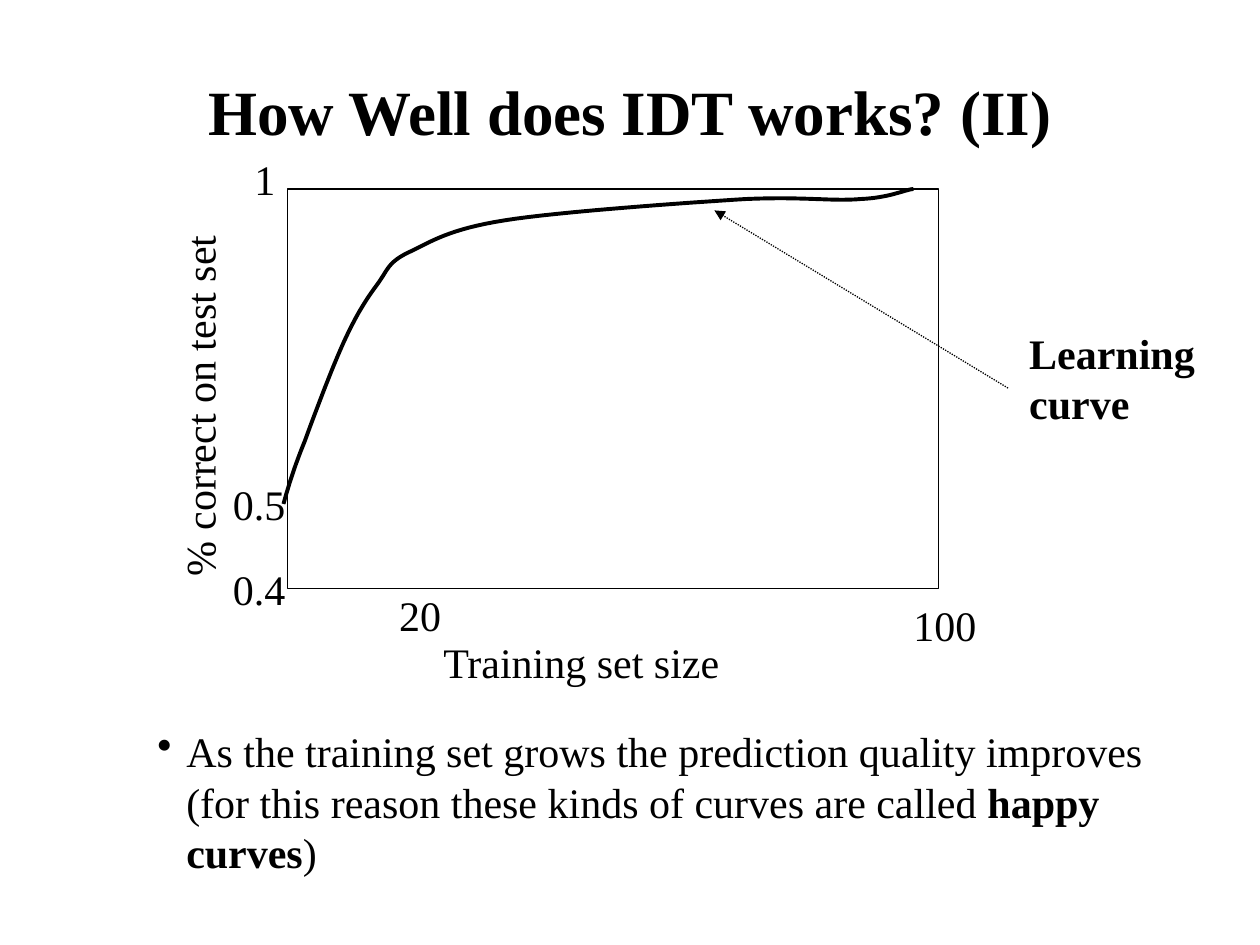
from dataclasses import dataclass
from lxml.etree import SubElement
from pptx import Presentation
from pptx.dml.color import RGBColor
from pptx.enum.dml import MSO_LINE
from pptx.enum.shapes import MSO_CONNECTOR, MSO_SHAPE
from pptx.enum.text import MSO_ANCHOR, MSO_AUTO_SIZE, PP_ALIGN
from pptx.oxml.ns import qn
from pptx.util import Pt

PX = 9144  # EMU in one px, 100 px to the inch


@dataclass(frozen=True)
class Theme:
    font: str = "Times New Roman"
    ink: RGBColor = RGBColor(0, 0, 0)
    head: int = 36
    body: int = 24
    thin: float = 0.75
    thick: float = 2.25


def emu(*sizes):
    return [round(size * PX) for size in sizes]


def write(frame, text, theme, size=None, bold=False, align=PP_ALIGN.LEFT):
    """Fill a frame, one paragraph a line; asterisks switch bold on and off."""
    for row, line in enumerate(text.split("\n")):
        para = frame.add_paragraph() if row else frame.paragraphs[0]
        para.alignment = align
        for part, words in enumerate(line.split("*")):
            run = para.add_run()
            run.text = words
            run.font.name = theme.font
            run.font.size = Pt(size or theme.body)
            run.font.bold = bold != (part % 2 == 1)
            run.font.color.rgb = theme.ink


def trace(start, curves, steps=16):
    """Yield points along joined cubic Bezier curves."""
    for curve in curves:
        ends = (start, *curve)
        for step in range(1, steps + 1):
            t = step / steps
            parts = ((1 - t) ** 3, 3 * t * (1 - t) ** 2, 3 * t * t * (1 - t), t ** 3)
            yield tuple(sum(w * end[axis] for w, end in zip(parts, ends))
                        for axis in (0, 1))
        start = curve[-1]


class Page:
    def __init__(self, deck, theme):
        self.theme = theme
        self.slide = deck.slides.add_slide(deck.slide_layouts[5])
        self.shapes = self.slide.shapes

    def ink(self, shape, width):
        shape.line.color.rgb = self.theme.ink
        shape.line.width = Pt(width)

    def title(self, text, *box):
        head = self.shapes.title
        head.left, head.top, head.width, head.height = emu(*box)
        head.text_frame.vertical_anchor = MSO_ANCHOR.MIDDLE
        write(head.text_frame, text, self.theme, size=self.theme.head,
              bold=True, align=PP_ALIGN.CENTER)

    def label(self, text, *box, wrap=False, turn=0, **style):
        shape = self.shapes.add_textbox(*emu(*box))
        shape.rotation = turn
        frame = shape.text_frame
        frame.word_wrap = wrap
        frame.auto_size = MSO_AUTO_SIZE.SHAPE_TO_FIT_TEXT
        write(frame, text, self.theme, **style)
        return frame

    def bullet(self, text, *box, indent=23):
        frame = self.label(text, *box, wrap=True)
        for para in frame.paragraphs:
            props = para._p.get_or_add_pPr()
            hang, = emu(indent)
            props.set("marL", str(hang))
            props.set("indent", str(-hang))
            SubElement(props, qn("a:buChar"), char="•")

    def frame(self, *box):
        shape = self.shapes.add_shape(MSO_SHAPE.RECTANGLE, *emu(*box))
        shape.shadow.inherit = False
        shape.fill.background()
        self.ink(shape, self.theme.thin)

    def curve(self, start, curves):
        pen = self.shapes.build_freeform(*emu(*start), scale=1.0)
        pen.add_line_segments([emu(*dot) for dot in trace(start, curves)], close=False)
        shape = pen.convert_to_shape()
        shape.shadow.inherit = False
        shape.fill.background()
        self.ink(shape, self.theme.thick)

    def arrow(self, *ends):
        line = self.shapes.add_connector(MSO_CONNECTOR.STRAIGHT, *emu(*ends))
        self.ink(line, self.theme.thin)
        line.line.dash_style = MSO_LINE.ROUND_DOT
        SubElement(line.line._get_or_add_ln(), qn("a:tailEnd"), type="triangle")
        SubElement(line._element.spPr, qn("a:effectLst"))


def main():
    deck = Presentation()
    deck.slide_width, deck.slide_height = emu(1000, 750)
    page = Page(deck, Theme())
    page.title("How Well does IDT works? (II)", 75, 25, 850, 125)

    page.label("% correct on test set", 13, 297, 290, 50, turn=270)
    page.label("Training set size", 342, 500, 240, 50)
    ticks = (("0.4", 175, 442, 62), ("0.5", 175, 375, 62), ("1", 192, 117, 37),
             ("20", 307, 463, 53), ("100", 715, 471, 70))
    for text, left, top, width in ticks:
        page.label(text, left, top, width, 50)

    page.frame(228, 150, 517, 317)
    page.curve((225, 400), (
        ((229, 386), (233, 372), (242, 350)),
        ((250, 328), (265, 288), (275, 267)),
        ((285, 246), (292, 236), (300, 225)),
        ((308, 214), (308, 208), (325, 200)),
        ((342, 192), (356, 182), (400, 175)),
        ((444, 168), (544, 161), (592, 158)),
        ((639, 156), (661, 160), (683, 158)),
        ((706, 157), (717, 151), (725, 150)),
    ))
    page.arrow(800, 308, 567, 167)
    page.label("Learning\ncurve", 807, 255, 152, 90, bold=True)
    page.bullet("As the training set grows the prediction quality improves "
                "(for this reason these kinds of curves are called "
                "*happy curves*)", 115, 571, 852, 90)
    deck.save("out.pptx")


if __name__ == "__main__":
    main()
